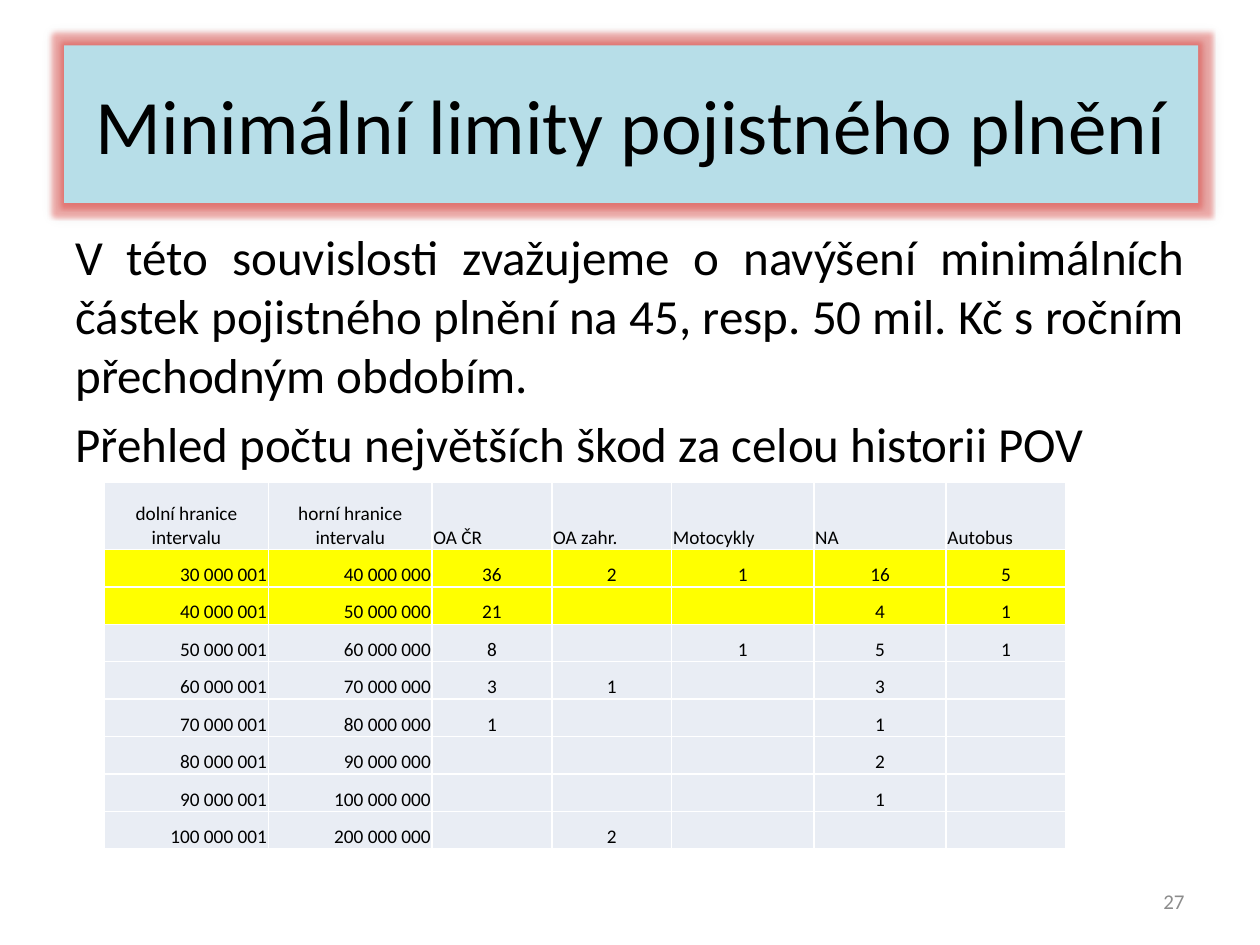
from dataclasses import dataclass

from lxml.etree import SubElement
from pptx import Presentation
from pptx.dml.color import RGBColor
from pptx.enum.shapes import MSO_SHAPE
from pptx.enum.text import MSO_ANCHOR, PP_ALIGN
from pptx.oxml import parse_xml
from pptx.oxml.ns import nsdecls, qn
from pptx.util import Inches, Pt


@dataclass(frozen=True)
class Theme:
    font: str = "Calibri"
    text: str = "000000"
    muted: str = "8C8C8C"
    title_fill: str = "B7DEE8"
    glow: str = "E6413C"
    cell: str = "E9EDF4"
    highlight: str = "FFFF00"
    border: str = "FFFFFF"
    title_size: float = 44
    body_size: float = 28
    table_size: float = 11
    number_size: float = 12


@dataclass(frozen=True)
class Box:
    left: float
    top: float
    width: float
    height: float

    def lengths(self) -> list:
        return [Inches(v) for v in (self.left, self.top, self.width, self.height)]


@dataclass(frozen=True)
class Interval:
    lower: str
    upper: str
    counts: tuple

    def values(self) -> tuple:
        return (self.lower, self.upper, *self.counts)


THEME = Theme()
HEADERS = ("dolní hranice intervalu", "horní hranice intervalu", "OA ČR",
           "OA zahr.", "Motocykly", "NA", "Autobus")
INTERVALS = (
    Interval("30 000 001", "40 000 000", ("36", "2", "1", "16", "5")),
    Interval("40 000 001", "50 000 000", ("21", "", "", "4", "1")),
    Interval("50 000 001", "60 000 000", ("8", "", "1", "5", "1")),
    Interval("60 000 001", "70 000 000", ("3", "1", "", "3", "")),
    Interval("70 000 001", "80 000 000", ("1", "", "", "1", "")),
    Interval("80 000 001", "90 000 000", ("", "", "", "2", "")),
    Interval("90 000 001", "100 000 000", ("", "", "", "1", "")),
    Interval("100 000 001", "200 000 000", ("", "2", "", "", "")),
)
COLUMN_WIDTHS = (1.3, 1.3, 0.95, 0.95, 1.13, 1.05, 0.95)
HEADER_HEIGHT = 0.53
HIGHLIGHTED_ROWS = (1, 2)
BOUND_COLUMNS = 2


def write(p, text: str, size: float, align, color: str = THEME.text) -> None:
    p.text = text
    p.alignment = align
    for r in p.runs:
        r.font.name = THEME.font
        r.font.size = Pt(size)
        r.font.color.rgb = RGBColor.from_string(color)


def add_title(slide, box: Box, text: str) -> None:
    sp = slide.shapes.add_shape(MSO_SHAPE.RECTANGLE, *box.lengths())
    sp.fill.solid()
    sp.fill.fore_color.rgb = RGBColor.from_string(THEME.title_fill)
    sp.line.fill.background()
    sp.shadow.inherit = False
    effects = sp._element.spPr.find(qn("a:effectLst"))
    glow = SubElement(effects, qn("a:glow"), rad=str(Pt(5)))
    shadow = SubElement(effects, qn("a:outerShdw"), blurRad=str(Pt(6)),
                        dist="0", dir="18900000")
    for effect, color, alpha in ((glow, THEME.glow, 40), (shadow, THEME.text, 20)):
        clr = SubElement(effect, qn("a:srgbClr"), val=color)
        SubElement(clr, qn("a:alpha"), val=str(alpha * 1000))
    tf = sp.text_frame
    tf.word_wrap = True
    tf.vertical_anchor = MSO_ANCHOR.MIDDLE
    write(tf.paragraphs[0], text, THEME.title_size, PP_ALIGN.CENTER)


def add_text(slide, box: Box, paragraphs: tuple, size: float, align,
             color: str = THEME.text, anchor=MSO_ANCHOR.TOP,
             space_before: float = 0) -> None:
    tf = slide.shapes.add_textbox(*box.lengths()).text_frame
    tf.word_wrap = True
    tf.vertical_anchor = anchor
    for i, text in enumerate(paragraphs):
        p = tf.add_paragraph() if i else tf.paragraphs[0]
        p.space_before = Pt(space_before)
        write(p, text, size, align, color)


def format_cell(cell, text: str, fill: str, align) -> None:
    cell.margin_left = cell.margin_right = cell.margin_top = Inches(0.01)
    cell.margin_bottom = 0
    cell.vertical_anchor = MSO_ANCHOR.BOTTOM
    p = cell.text_frame.paragraphs[0]
    write(p, text, THEME.table_size, align)
    if not text:
        SubElement(p._p, qn("a:endParaRPr"), sz=str(int(THEME.table_size * 100)))
    tc_pr = cell._tc.get_or_add_tcPr()
    for side in ("lnL", "lnR", "lnT", "lnB"):
        tc_pr.append(parse_xml(
            f'<a:{side} {nsdecls("a")} w="{Pt(1)}"><a:solidFill>'
            f'<a:srgbClr val="{THEME.border}"/></a:solidFill></a:{side}>'))
    cell.fill.solid()
    cell.fill.fore_color.rgb = RGBColor.from_string(fill)


def cell_align(row: int, col: int):
    if row == 0:
        return PP_ALIGN.CENTER if col < BOUND_COLUMNS else PP_ALIGN.LEFT
    return PP_ALIGN.RIGHT if col < BOUND_COLUMNS else PP_ALIGN.CENTER


def add_damage_table(slide, box: Box) -> None:
    rows = [HEADERS] + [interval.values() for interval in INTERVALS]
    table = slide.shapes.add_table(len(rows), len(HEADERS), *box.lengths()).table
    for column, width in zip(table.columns, COLUMN_WIDTHS):
        column.width = Inches(width)
    row_height = (box.height - HEADER_HEIGHT) / len(INTERVALS)
    for i, values in enumerate(rows):
        table.rows[i].height = Inches(row_height if i else HEADER_HEIGHT)
        fill = THEME.highlight if i in HIGHLIGHTED_ROWS else THEME.cell
        for j, text in enumerate(values):
            format_cell(table.cell(i, j), text, fill, cell_align(i, j))


def main() -> None:
    prs = Presentation()
    prs.slide_width, prs.slide_height = Inches(10), Inches(7.5)
    s = prs.slides.add_slide(prs.slide_layouts[6])
    add_text(s, Box(0.5, 1.75, 9, 4.95), (
        "V této souvislosti zvažujeme o navýšení minimálních částek pojistného "
        "plnění na 45, resp. 50 mil. Kč s ročním přechodným obdobím.",
        "Přehled počtu největších škod za celou historii POV",
    ), THEME.body_size, PP_ALIGN.JUSTIFY, space_before=0.2 * THEME.body_size)
    add_title(s, Box(0.51, 0.36, 9, 1.25), "Minimální limity pojistného plnění")
    add_damage_table(s, Box(0.83, 3.83, sum(COLUMN_WIDTHS), 2.91))
    add_text(s, Box(7.17, 6.95, 2.33, 0.4), ("27",), THEME.number_size,
             PP_ALIGN.RIGHT, THEME.muted, MSO_ANCHOR.MIDDLE)
    prs.save("out.pptx")


if __name__ == "__main__":
    main()
